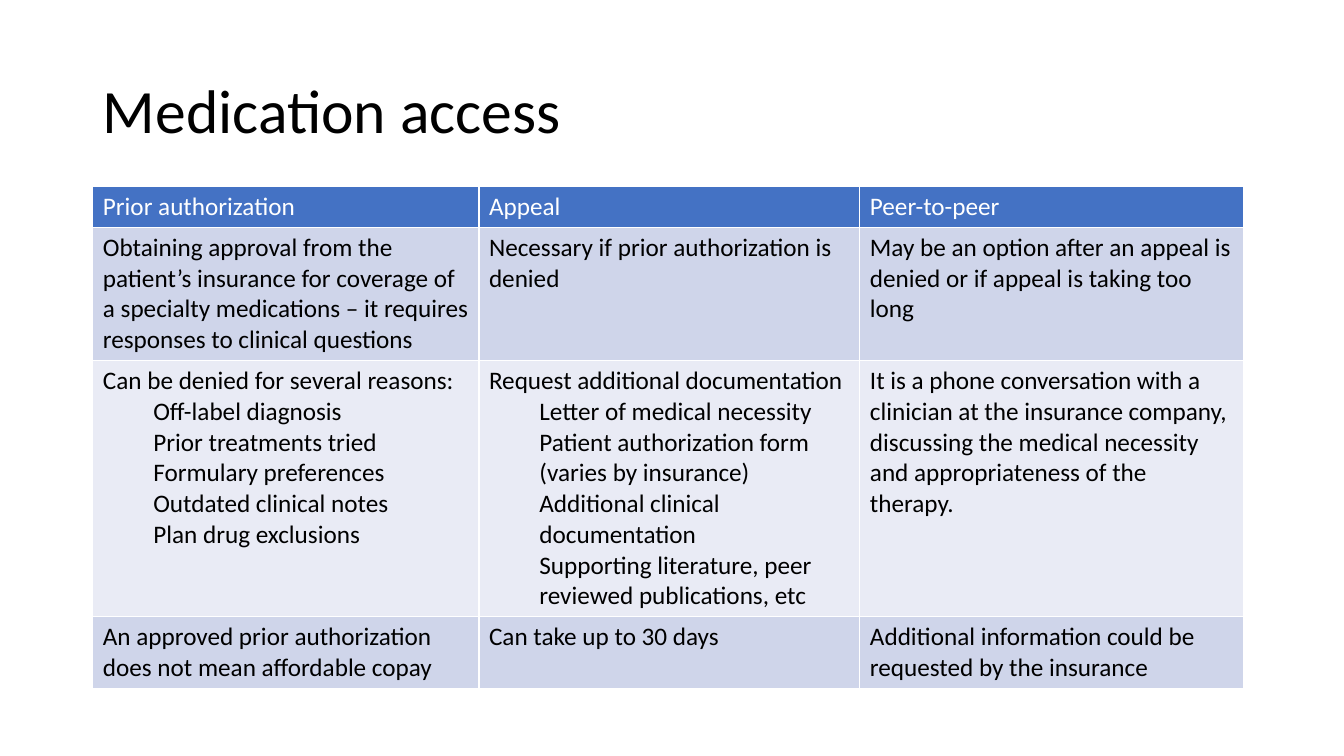
"""Build a slide with a table comparing three routes to medication access."""
from pptx import Presentation
from pptx.dml.color import RGBColor
from pptx.enum.text import MSO_ANCHOR as Anchor, MSO_AUTO_SIZE as AutoSize, PP_ALIGN as Align
from pptx.util import Cm, Pt

TITLE = "Medication access"
ROWS = [
    [["Prior authorization"], ["Appeal"], ["Peer-to-peer"]],
    [
        ["Obtaining approval from the patient’s insurance for coverage of a specialty "
         "medications – it requires responses to clinical questions"],
        ["Necessary if prior authorization is denied"],
        ["May be an option after an appeal is denied or if appeal is taking too long"],
    ],
    [
        ["Can be denied for several reasons:", "Off-label diagnosis", "Prior treatments tried",
         "Formulary preferences", "Outdated clinical notes", "Plan drug exclusions"],
        ["Request additional documentation", "Letter of medical necessity",
         "Patient authorization form (varies by insurance)",
         "Additional clinical documentation",
         "Supporting literature, peer reviewed publications, etc"],
        ["It is a phone conversation with a clinician at the insurance company, discussing "
         "the medical necessity and appropriateness of the therapy."],
    ],
    [
        ["An approved prior authorization does not mean affordable copay"],
        ["Can take up to 30 days"],
        ["Additional information could be requested by the insurance"],
    ],
]
COLUMN_WIDTHS = [9.73, 9.6, 9.68]
ROW_HEIGHTS = [1.03, 3.35, 6.45, 1.8]
LEFT, TABLE_TOP = 2.34, 4.7
INDENT = Cm(1.27)
FONT = "Calibri"
COLORS = {"header": "4472C4", "dark band": "CFD5EA", "light band": "E9EBF5",
          "text": "000000", "header text": "FFFFFF"}


def color(name):
    return RGBColor.from_string(COLORS[name])


def style(para, size, color_name):
    para.font.name = FONT
    para.font.size = Pt(size)
    para.font.bold = False
    para.font.color.rgb = color(color_name)


def add_title(page):
    title = page.shapes.title
    title.left, title.top, title.width, title.height = Cm(LEFT), Cm(1.01), Cm(29.21), Cm(3.68)
    frame = title.text_frame
    frame.text = TITLE
    frame.auto_size = AutoSize.NONE
    frame.vertical_anchor = Anchor.MIDDLE
    para = frame.paragraphs[0]
    para.alignment = Align.LEFT
    para.line_spacing = 0.9
    style(para, 44, "text")


def fill_cell(cell, lines, fill, text_color):
    cell.fill.solid()
    cell.fill.fore_color.rgb = color(fill)
    cell.text = "\n".join(lines)
    for index, para in enumerate(cell.text_frame.paragraphs):
        style(para, 18, text_color)
        if index:
            para.level = 1
            para._p.get_or_add_pPr().set("marL", str(INDENT))


def add_access_table(page):
    table = page.shapes.add_table(
        len(ROWS), len(COLUMN_WIDTHS), Cm(LEFT), Cm(TABLE_TOP),
        Cm(sum(COLUMN_WIDTHS)), Cm(sum(ROW_HEIGHTS))).table
    for column, width in zip(table.columns, COLUMN_WIDTHS):
        column.width = Cm(width)
    for number, (row, height, texts) in enumerate(zip(table.rows, ROW_HEIGHTS, ROWS)):
        row.height = Cm(height)
        band = "dark band" if number % 2 else "light band"
        fill, text_color = (band, "text") if number else ("header", "header text")
        for cell, lines in zip(row.cells, texts):
            fill_cell(cell, lines, fill, text_color)


def main():
    deck = Presentation()
    deck.slide_width, deck.slide_height = Cm(33.87), Cm(19.05)
    page = deck.slides.add_slide(deck.slide_layouts.get_by_name("Title Only"))
    add_title(page)
    add_access_table(page)
    deck.save("out.pptx")


if __name__ == "__main__":
    main()
